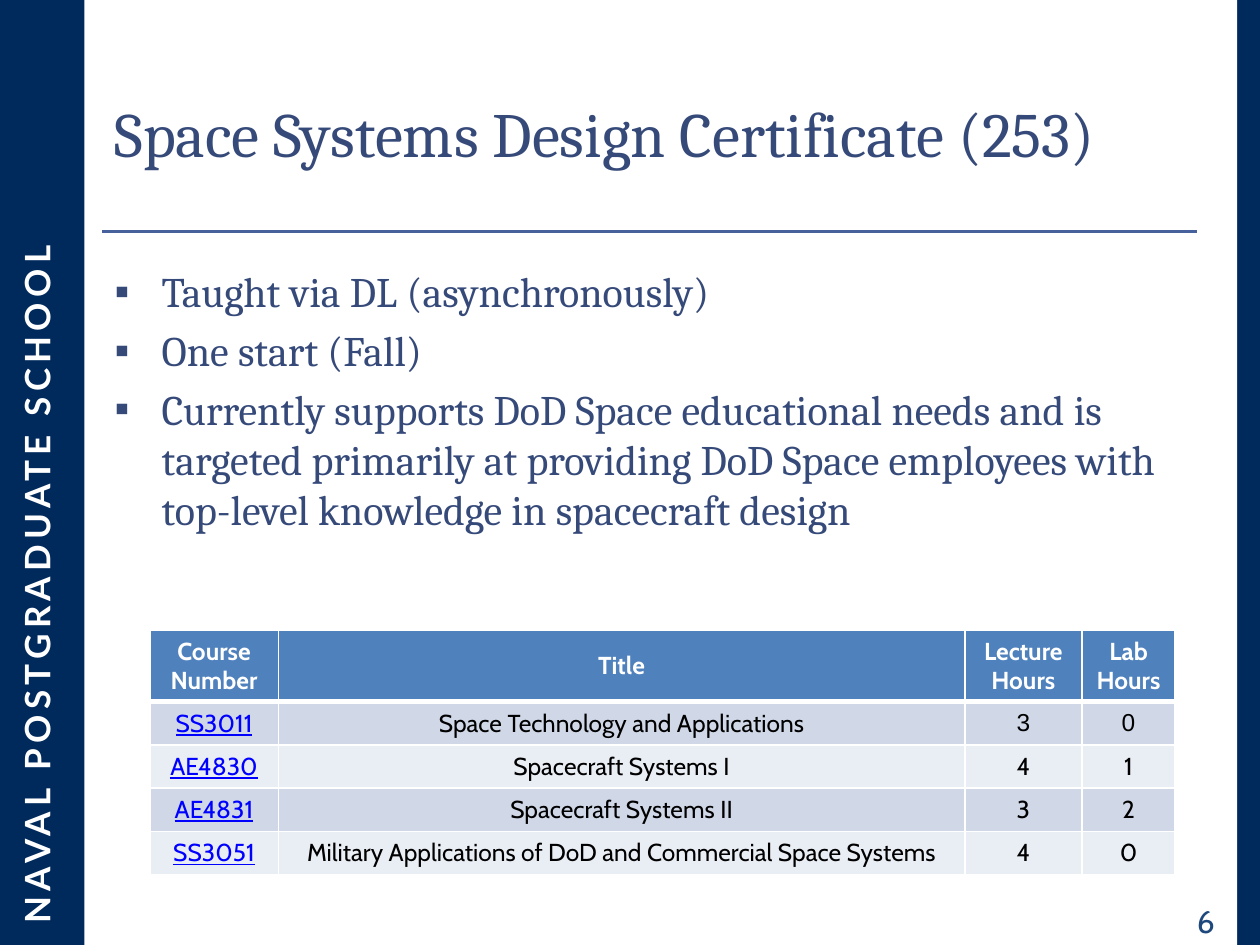
from lxml.etree import SubElement as Sub
from pptx import Presentation
from pptx.dml.color import RGBColor
from pptx.enum.shapes import MSO_CONNECTOR as Conn, MSO_SHAPE as Shape
from pptx.enum.text import MSO_ANCHOR as Anchor, PP_ALIGN as Align
from pptx.oxml import parse_xml
from pptx.oxml.ns import nsdecls, qn
from pptx.util import Cm, Pt

NAVY = RGBColor(0x00, 0x29, 0x5C)
RULE = RGBColor(0x47, 0x61, 0x9D)
INK = RGBColor(0x36, 0x4A, 0x7A)
PAGE = RGBColor(0x1F, 0x49, 0x7D)
WHITE = RGBColor(0xFF, 0xFF, 0xFF)
BLACK = RGBColor(0x00, 0x00, 0x00)
LINK = RGBColor(0x00, 0x00, 0xFF)
HEAD = RGBColor(0x4F, 0x81, 0xBD)
BANDS = [RGBColor(0xD0, 0xD8, 0xE8), RGBColor(0xE9, 0xED, 0xF4)]


def write(para, words, font="Cabin", size=14, color=BLACK, bold=False,
          under=False, align=Align.LEFT):
    """Add one formatted run to a paragraph and return it."""
    para.alignment = align
    run = para.add_run()
    run.text = words
    run.font.name = font
    run.font.size = Pt(size)
    run.font.color.rgb = color
    run.font.bold = bold
    run.font.underline = under
    return run


def frame(left, top, width, height):
    """Add a wrapping text box."""
    box = slide.shapes.add_textbox(Cm(left), Cm(top), Cm(width), Cm(height))
    box.text_frame.word_wrap = True
    return box


deck = Presentation()
deck.slide_width, deck.slide_height = Cm(25.4), Cm(19.05)
slide = deck.slides.add_slide(deck.slide_layouts[6])

# Navy background with a white panel
slide.background.fill.solid()
slide.background.fill.fore_color.rgb = NAVY
panel = slide.shapes.add_shape(Shape.RECTANGLE, Cm(1.7), 0, Cm(23.24), Cm(19.05))
panel.shadow.inherit = False
panel.fill.solid()
panel.fill.fore_color.rgb = WHITE
panel.line.fill.background()

# School name up the left side
side = frame(-8.03, 9.53, 17.55, 1.12)
side.rotation = 270
run = write(side.text_frame.paragraphs[0], "NAVAL POSTGRADUATE SCHOOL",
            font="Lato", size=20, color=WHITE, bold=True, align=Align.JUSTIFY)
run.font._element.set("spc", "300")

# Rule under the title
rule = slide.shapes.add_connector(Conn.STRAIGHT, Cm(2.06), Cm(4.67), Cm(24.13), Cm(4.67))
rule.line.color.rgb = RULE
rule.line.width = Pt(1.5)
Sub(rule._element.spPr, qn("a:effectLst"))

# Page number
page = frame(23.55, 18.06, 1.19, 1.02)
write(page.text_frame.paragraphs[0], "6", size=18, color=PAGE, align=Align.RIGHT)

# Title
title = frame(2.06, 1.52, 22.07, 2.59).text_frame
title.vertical_anchor = Anchor.MIDDLE
title.paragraphs[0].line_spacing = 0.8
write(title.paragraphs[0], "Space Systems Design Certificate (253)",
      font="Cambria", size=36, color=INK)

# Bullets
points = [
    "Taught via DL (asynchronously)",
    "One start (Fall)",
    "Currently supports DoD Space educational needs and is targeted primarily "
    "at providing DoD Space employees with top-level knowledge in spacecraft design",
]
body = frame(2.06, 5.23, 22.07, 13.18).text_frame
for i, point in enumerate(points):
    para = body.add_paragraph() if i else body.paragraphs[0]
    props = para._p.get_or_add_pPr()
    props.set("marL", str(Cm(0.95)))
    props.set("indent", str(Cm(-0.95)))
    Sub(props, qn("a:buFont"), typeface="Arial")
    Sub(props, qn("a:buChar"), char="▪")
    para.space_before = Pt(4.8 if i else 0)
    write(para, point, font="Cambria", size=24, color=INK)

# Course table
rows = [
    ["Course Number", "Title", "Lecture Hours", "Lab Hours"],
    ["SS3011", "Space Technology and Applications", "3", "0"],
    ["AE4830", "Spacecraft Systems I", "4", "1"],
    ["AE4831", "Spacecraft Systems II", "3", "2"],
    ["SS3051", "Military Applications of DoD and Commercial Space Systems", "4", "0"],
]
wide = [2.59, 13.84, 2.36, 1.88]
high = [1.44] + [0.87] * 4
table = slide.shapes.add_table(len(rows), len(wide), Cm(3.02), Cm(12.7),
                               Cm(sum(wide)), Cm(sum(high))).table
table.horz_banding = False
for col, width in zip(table.columns, wide):
    col.width = Cm(width)
for r, row in enumerate(rows):
    table.rows[r].height = Cm(high[r])
    for c, words in enumerate(row):
        cell = table.cell(r, c)
        cell.vertical_anchor = Anchor.MIDDLE
        cell.margin_left = cell.margin_right = Cm(0.13)
        cell.margin_top = cell.margin_bottom = Cm(0.13)
        cell.fill.solid()
        cell.fill.fore_color.rgb = BANDS[(r - 1) % 2] if r else HEAD
        link = r > 0 and c == 0
        write(cell.text_frame.paragraphs[0], words,
              font="Arial" if r == 1 and c > 1 else "Cabin",
              color=WHITE if r == 0 else LINK if link else BLACK,
              bold=r == 0, under=link, align=Align.CENTER)
        # White borders, thick below the header
        for n, edge in enumerate("LRTB"):
            thick = (r, edge) in [(0, "B"), (1, "T")]
            cell._tc.get_or_add_tcPr().insert(n, parse_xml(
                f'<a:ln{edge} {nsdecls("a")} w="{Pt(3 if thick else 1)}">'
                f'<a:solidFill><a:srgbClr val="{WHITE}"/></a:solidFill></a:ln{edge}>'))

deck.save("out.pptx")
